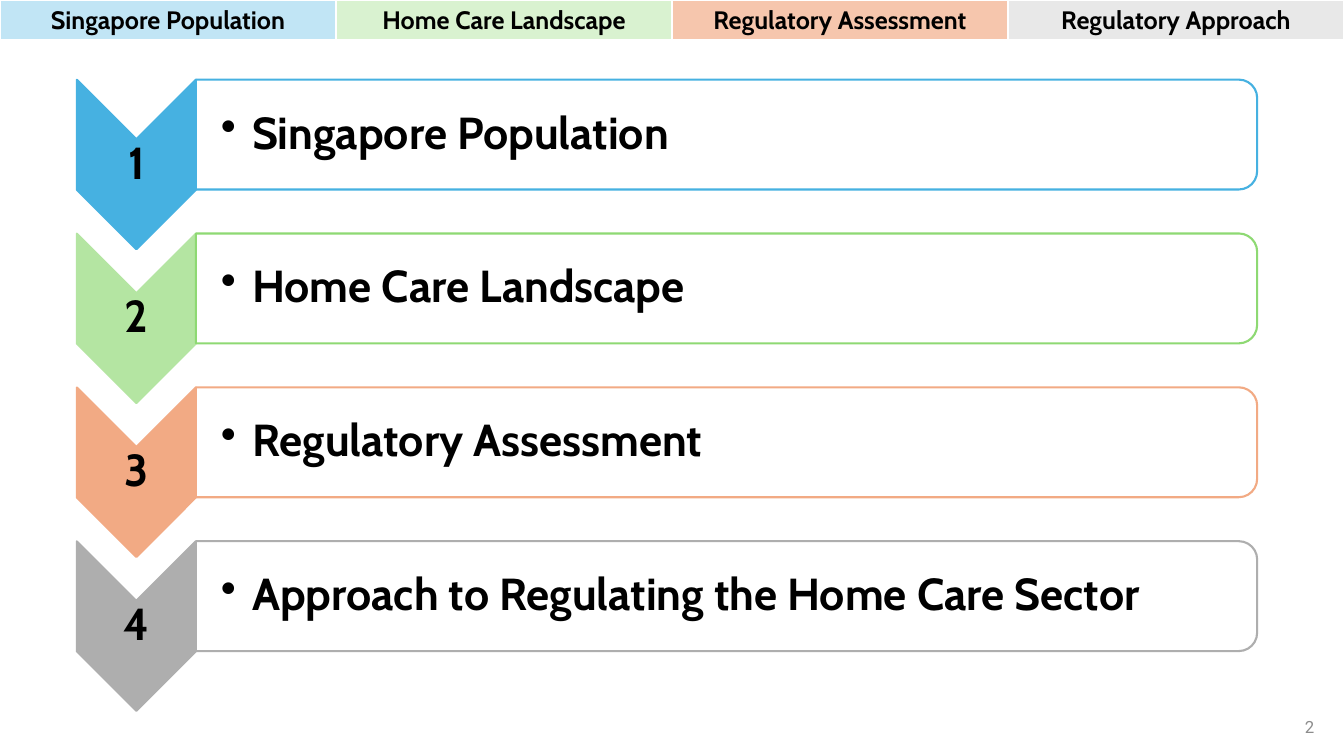
"""Build the agenda slide: a section bar and four numbered chevron rows."""
from lxml.etree import SubElement
from pptx import Presentation
from pptx.dml.color import RGBColor
from pptx.enum.shapes import MSO_SHAPE as Shape
from pptx.enum.text import MSO_ANCHOR as Anchor, PP_ALIGN as Align
from pptx.oxml.ns import qn
from pptx.util import Pt


def paint(color_format, color):
    color_format.rgb = RGBColor.from_string(color)


def write(frame, text, size, align, font="Cabin", color="000000", bold=True):
    frame.word_wrap = True
    frame.vertical_anchor = Anchor.MIDDLE
    line = frame.paragraphs[0]
    line.text = text
    line.alignment = align
    run_font = line.runs[0].font
    run_font.name, run_font.size, run_font.bold = font, Pt(size), bold
    paint(run_font.color, color)
    return line


deck = Presentation()
deck.slide_width, deck.slide_height = Pt(960), Pt(540)
slide = deck.slides.add_slide(deck.slide_layouts[6])
shapes = slide.shapes

sections = [
    ("Singapore Population", "C1E5F5"),
    ("Home Care Landscape", "D9F2D0"),
    ("Regulatory Assessment", "F6C6AD"),
    ("Regulatory Approach", "E8E8E8"),
]
section_bar = shapes.add_table(1, len(sections), 0, 0, Pt(960), Pt(29.5)).table
for column, (section, tint) in enumerate(sections):
    cell = section_bar.cell(0, column)
    write(cell.text_frame, section, 18, Align.CENTER)
    cell.vertical_anchor = Anchor.TOP
    properties = cell._tc.get_or_add_tcPr()
    for side, width in (("lnL", 1), ("lnR", 1), ("lnT", 1), ("lnB", 3)):
        border = SubElement(properties, qn(f"a:{side}"), w=str(Pt(width)))
        border_fill = SubElement(border, qn("a:solidFill"))
        SubElement(border_fill, qn("a:srgbClr"), val="FFFFFF")
    cell.fill.solid()
    paint(cell.fill.fore_color, tint)

agenda = [
    ("Singapore Population", "46B1E1", "46B1E1"),
    ("Home Care Landscape", "B4E5A2", "8ED973"),
    ("Regulatory Assessment", "F2AA84", "F2AA84"),
    ("Approach to Regulating the Home Care Sector", "AEAEAE", "AEAEAE"),
]
row_pitch = 109.9
for index, (topic, chevron_color, outline_color) in enumerate(agenda):
    offset = index * row_pitch

    chevron = shapes.add_shape(
        Shape.CHEVRON, Pt(36.9), Pt(75 + offset), Pt(121), Pt(85))
    panel = shapes.add_shape(
        Shape.ROUND_2_SAME_RECTANGLE, Pt(479.7), Pt(-282.9 + offset), Pt(78.5), Pt(758))
    for part, fill_color, line_color in (
            (chevron, chevron_color, chevron_color), (panel, "FFFFFF", outline_color)):
        part.rotation = 90
        part.shadow.inherit = False
        part.fill.solid()
        paint(part.fill.fore_color, fill_color)
        paint(part.line.color, line_color)
        part.line.width = Pt(1.5)
    panel_color = panel._element.spPr.find(qn("a:solidFill")).find(qn("a:srgbClr"))
    SubElement(panel_color, qn("a:alpha"), val="90000")

    number = shapes.add_textbox(Pt(54.9), Pt(99.2 + offset), Pt(85), Pt(36.6)).text_frame
    label = shapes.add_textbox(Pt(139.7), Pt(60.5 + offset), Pt(754.5), Pt(71.3)).text_frame
    for frame in (number, label):
        frame.margin_left = frame.margin_right = Pt(1.5)
        frame.margin_top = frame.margin_bottom = Pt(1.5)
    label.margin_left = Pt(18)
    write(number, str(index + 1), 32, Align.CENTER).line_spacing = 0.9
    bullet_line = write(label, topic, 32, Align.LEFT)
    bullet_line.line_spacing = 0.9
    bullet_format = bullet_line._p.get_or_add_pPr()
    bullet_format.set("marL", str(Pt(22.5)))
    bullet_format.set("indent", str(Pt(-22.5)))
    SubElement(bullet_format, qn("a:buChar"), char="•")

page_number = shapes.add_textbox(Pt(905), Pt(507), Pt(41), Pt(24.5)).text_frame
write(page_number, "2", 12, Align.RIGHT, "Roboto", "8C8C8C", False)

deck.save("out.pptx")
